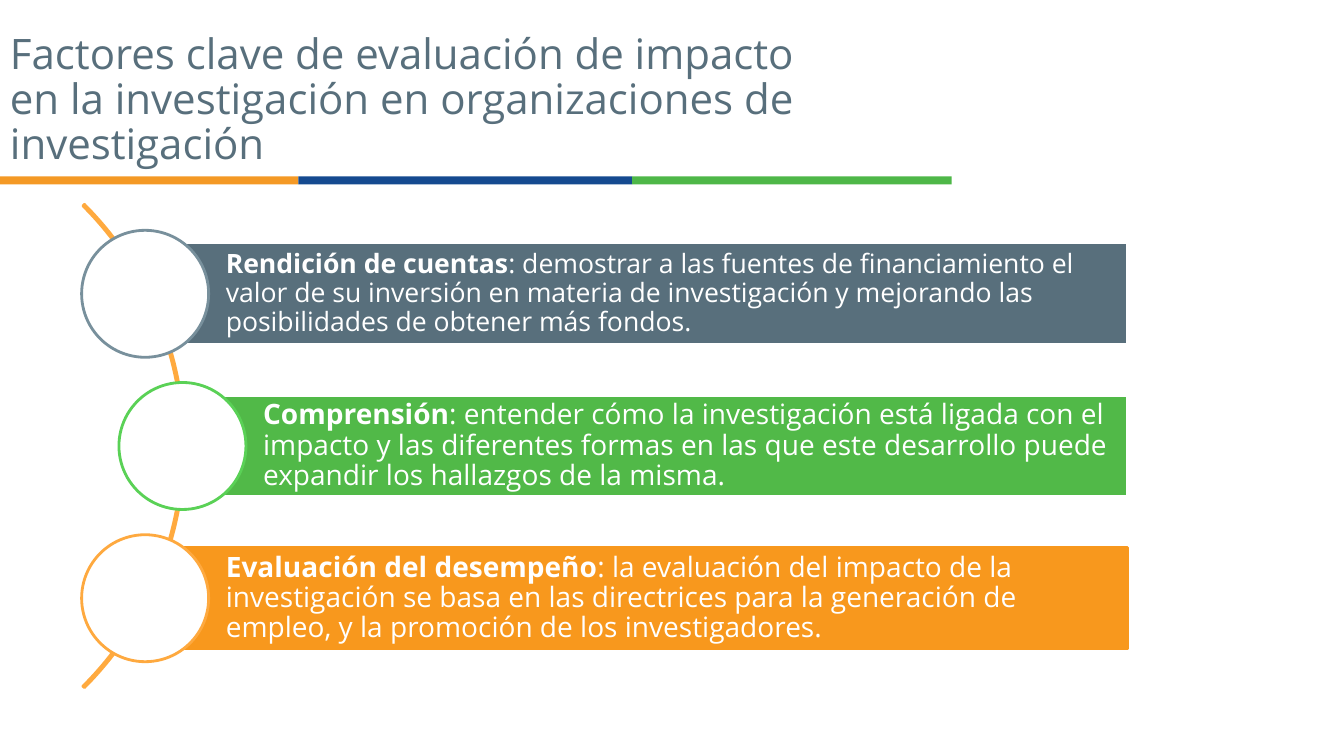
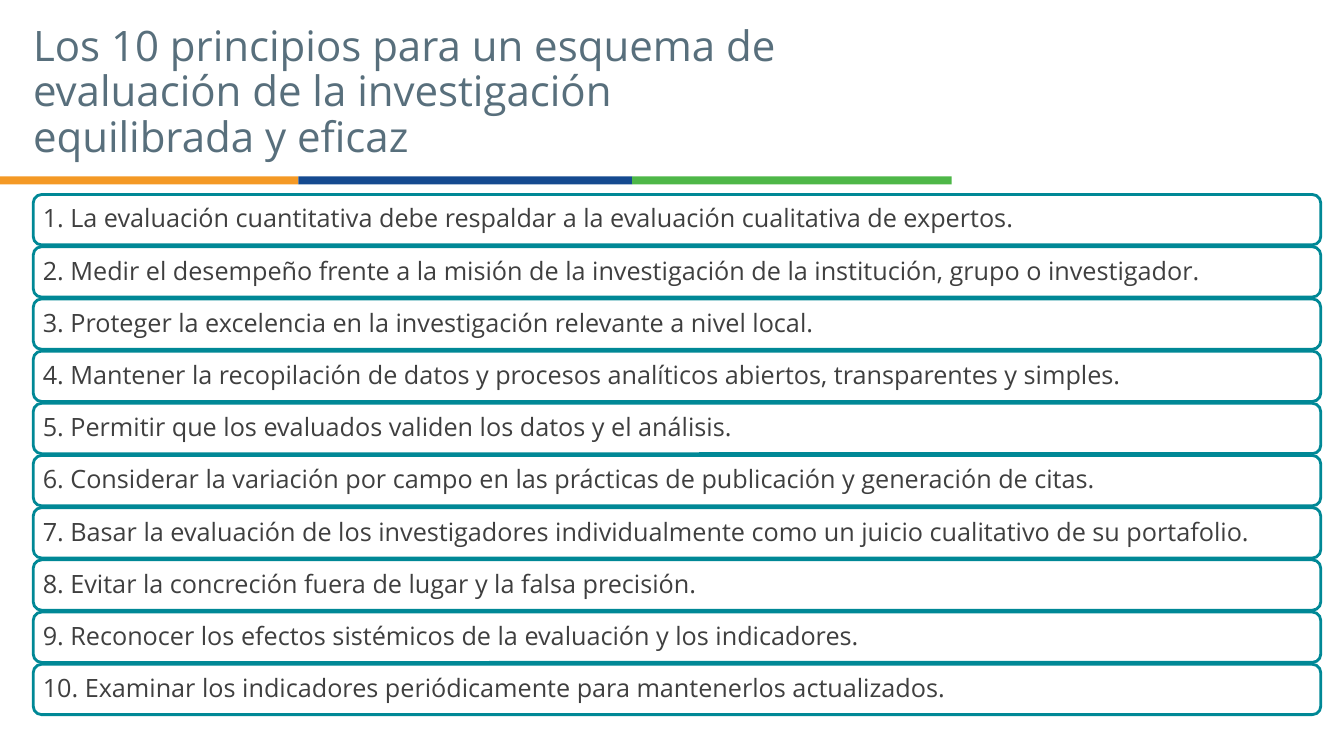
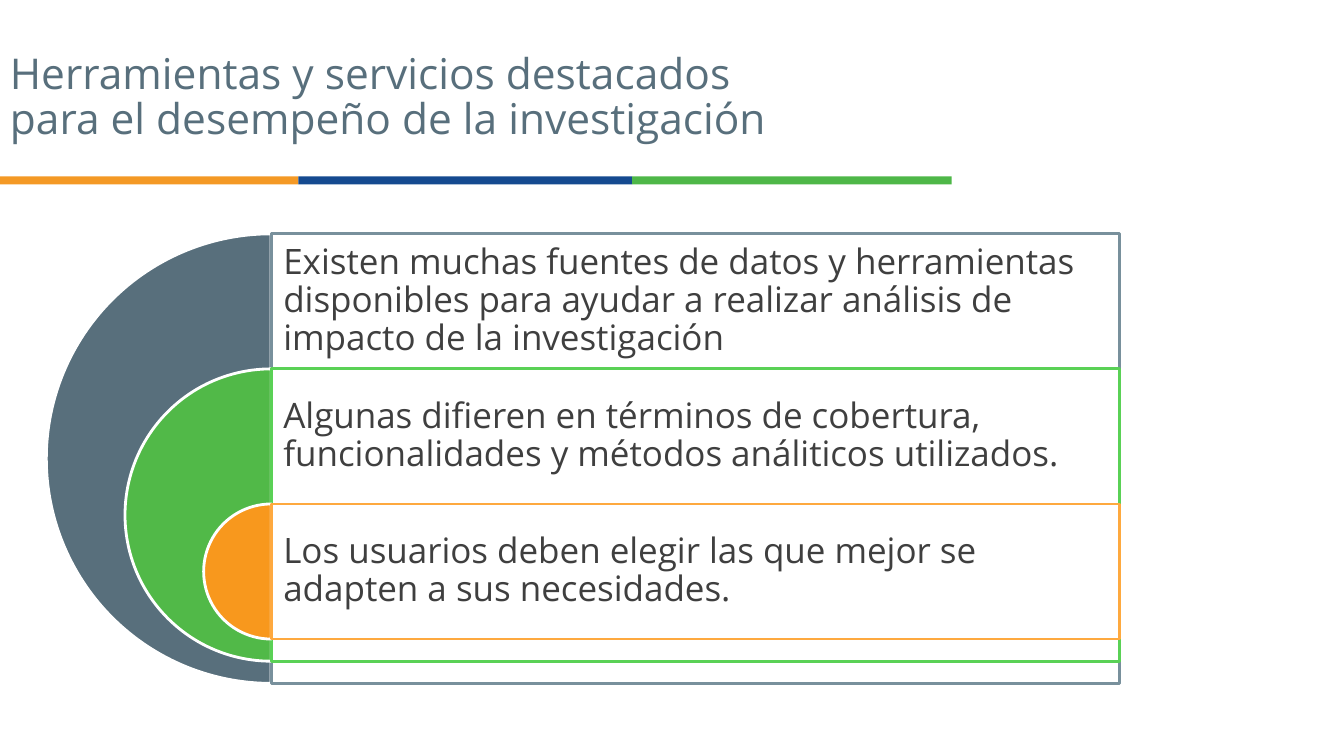
from lxml.etree import SubElement
from pptx import Presentation
from pptx.dml.color import RGBColor
from pptx.enum.shapes import MSO_SHAPE
from pptx.enum.text import MSO_ANCHOR, PP_ALIGN
from pptx.oxml.ns import qn
from pptx.util import Emu, Pt

FONT = "Open Sans"
SLATE, GREEN, ORANGE = "586F7C", "51B948", "F8981D"
SLATE_EDGE, GREEN_EDGE, ORANGE_EDGE = "78909C", "5AD156", "FEA93F"
WHITE, TEXT, TEAL = "FFFFFF", "3F3F3F", "008896"
BANDS = [(0, 296, "F49925"), (296, 331, "154A90"), (627, 317, "4EB748")]

FACTORS = [
    ("Rendición de cuentas", ": demostrar a las fuentes de financiamiento el valor de su inversión "
     "en materia de investigación y mejorando las posibilidades de obtener más fondos.",
     19, 0, SLATE, WHITE, SLATE_EDGE),
    ("Comprensión", ": entender cómo la investigación está ligada con el impacto y las diferentes "
     "formas en las que este desarrollo puede expandir los hallazgos de la misma.",
     20, 37, GREEN, WHITE, GREEN_EDGE),
    ("Evaluación del desempeño", ": la evaluación del impacto de la investigación se basa en las "
     "directrices para la generación de empleo, y la promoción de los investigadores.",
     20, 0, ORANGE, ORANGE, ORANGE_EDGE),
]
PRINCIPLES = [
    "La evaluación cuantitativa debe respaldar a la evaluación cualitativa de expertos.",
    "Medir el desempeño frente a la misión de la investigación de la institución, grupo o investigador.",
    "Proteger la excelencia en la investigación relevante a nivel local.",
    "Mantener la recopilación de datos y procesos analíticos abiertos, transparentes y simples.",
    "Permitir que los evaluados validen los datos y el análisis.",
    "Considerar la variación por campo en las prácticas de publicación y generación de citas.",
    "Basar la evaluación de los investigadores individualmente como un juicio cualitativo de su portafolio.",
    "Evitar la concreción fuera de lugar y la falsa precisión.",
    "Reconocer los efectos sistémicos de la evaluación y los indicadores.",
    "Examinar los indicadores periódicamente para mantenerlos actualizados.",
]
TOOLS = [
    ("Existen muchas fuentes de datos y herramientas disponibles para ayudar a realizar análisis "
     "de impacto de la investigación", SLATE, SLATE_EDGE),
    ("Algunas difieren en términos de cobertura, funcionalidades y métodos análiticos utilizados.",
     GREEN, GREEN_EDGE),
    ("Los usuarios deben elegir las que mejor se adapten a sus necesidades.", ORANGE, ORANGE_EDGE),
]


def px(n):
    """Length in EMU, at 100 px to the inch."""
    return Emu(round(n * 9144))


def rgb(value):
    return RGBColor.from_string(value)


def add_shape(s, kind, box, fill=None, line=None, adj=(), opacity=100):
    sp = s.shapes.add_shape(kind, *map(px, box))
    sp.shadow.inherit = False
    for i, value in enumerate(adj):
        sp.adjustments[i] = value
    if fill:
        sp.fill.solid()
        sp.fill.fore_color.rgb = rgb(fill)
        if opacity < 100:
            color = sp.fill._xPr.find(qn("a:solidFill"))[0]
            SubElement(color, qn("a:alpha"), val=str(opacity * 1000))
    else:
        sp.fill.background()
    if line:
        sp.line.color.rgb = rgb(line)
        sp.line.width = Pt(2)
    else:
        sp.line.fill.background()
    return sp


def set_text(sp, paragraphs, size, color, insets, anchor=MSO_ANCHOR.MIDDLE):
    """Each paragraph is a list of (text, bold) runs; insets run left, top, right, bottom."""
    tf = sp.text_frame
    tf.word_wrap = True
    tf.vertical_anchor = anchor
    tf.margin_left, tf.margin_top, tf.margin_right, tf.margin_bottom = map(px, insets)
    for i, runs in enumerate(paragraphs):
        p = tf.add_paragraph() if i else tf.paragraphs[0]
        p.alignment = PP_ALIGN.LEFT
        p.line_spacing = 0.9
        for text, bold in runs:
            r = p.add_run()
            r.text = text
            r.font.name = FONT
            r.font.size = Pt(size)
            r.font.bold = bold
            r.font.color.rgb = rgb(color)


def add_titled_slide(prs, lines, box, size=30, anchor=MSO_ANCHOR.TOP):
    s = prs.slides.add_slide(prs.slide_layouts[6])
    for x, w, color in BANDS:
        add_shape(s, MSO_SHAPE.RECTANGLE, (x, 175, w, 8), color)
    title = s.shapes.add_textbox(*map(px, box))
    set_text(title, [[(line, False)] for line in lines], size, SLATE, (10, 5, 10, 5), anchor)
    return s


def add_factors(s, x, y, right):
    """Bars with circles strung along an arc."""
    bar_h, pitch, circle = 101, 151, 126
    arc = 678
    middle = y + pitch + bar_h / 2
    add_shape(s, MSO_SHAPE.BLOCK_ARC, (x - 576, middle - arc / 2, arc, arc),
              line="FFAA3F", adj=(189, 27, 0.003))
    for i, (name, text, size, shift, fill, line, edge) in enumerate(FACTORS):
        left, top = x + shift, y + i * pitch
        bar = add_shape(s, MSO_SHAPE.RECTANGLE, (left + circle / 2, top, right - left - circle / 2, bar_h),
                        fill, line)
        set_text(bar, [[(name, True), (text, False)]], size, WHITE, (80, 6, 6, 6))
        add_shape(s, MSO_SHAPE.OVAL, (left, top + (bar_h - circle) / 2, circle, circle), WHITE, edge)


def add_principles(s, x, y, w, h):
    card_h = 50
    pitch = (h - card_h) / (len(PRINCIPLES) - 1)
    for i, text in enumerate(PRINCIPLES):
        card = add_shape(s, MSO_SHAPE.ROUNDED_RECTANGLE, (x, y + i * pitch, w, card_h),
                         WHITE, TEAL, adj=(0.167,))
        set_text(card, [[(f"{i + 1}. {text}", False)]], 18, TEXT, (7, 7, 7, 7))


def add_tools(s, x, y, w, h):
    """Nested half discs, each with a panel whose text fills its top row."""
    row, shrink, inset = 134, 156, 12
    axis = x + h / 2
    for i, (text, fill, edge) in enumerate(TOOLS):
        top, size = y + i * row, h - i * shrink
        add_shape(s, MSO_SHAPE.PIE, (axis - size / 2, top, size, size), fill, WHITE, adj=(54, 162))
        panel = add_shape(s, MSO_SHAPE.RECTANGLE, (axis, top, x + w - axis, size), WHITE, edge, opacity=87)
        set_text(panel, [[(text, False)]], 25, TEXT, (inset, inset, inset, size - row + inset))


def main():
    prs = Presentation()
    prs.slide_width, prs.slide_height = px(1333), px(750)

    s = add_titled_slide(prs, ["Factores clave de evaluación de impacto en la investigación en "
                               "organizaciones de investigación"],
                         (0, 41, 852, 118), anchor=MSO_ANCHOR.MIDDLE)
    add_factors(s, 81, 241, 1118)

    s = add_titled_slide(prs, ["Los 10 principios para un esquema de evaluación de la investigación",
                               "equilibrada y eficaz"], (23, 20, 874, 135))
    add_principles(s, 33, 193, 1277, 516)

    s = add_titled_slide(prs, ["Herramientas y servicios destacados",
                               "para el desempeño de la investigación"], (0, 47, 942, 118), size=30.3)
    add_tools(s, 46, 232, 1064, 446)

    prs.save("out.pptx")


if __name__ == "__main__":
    main()
